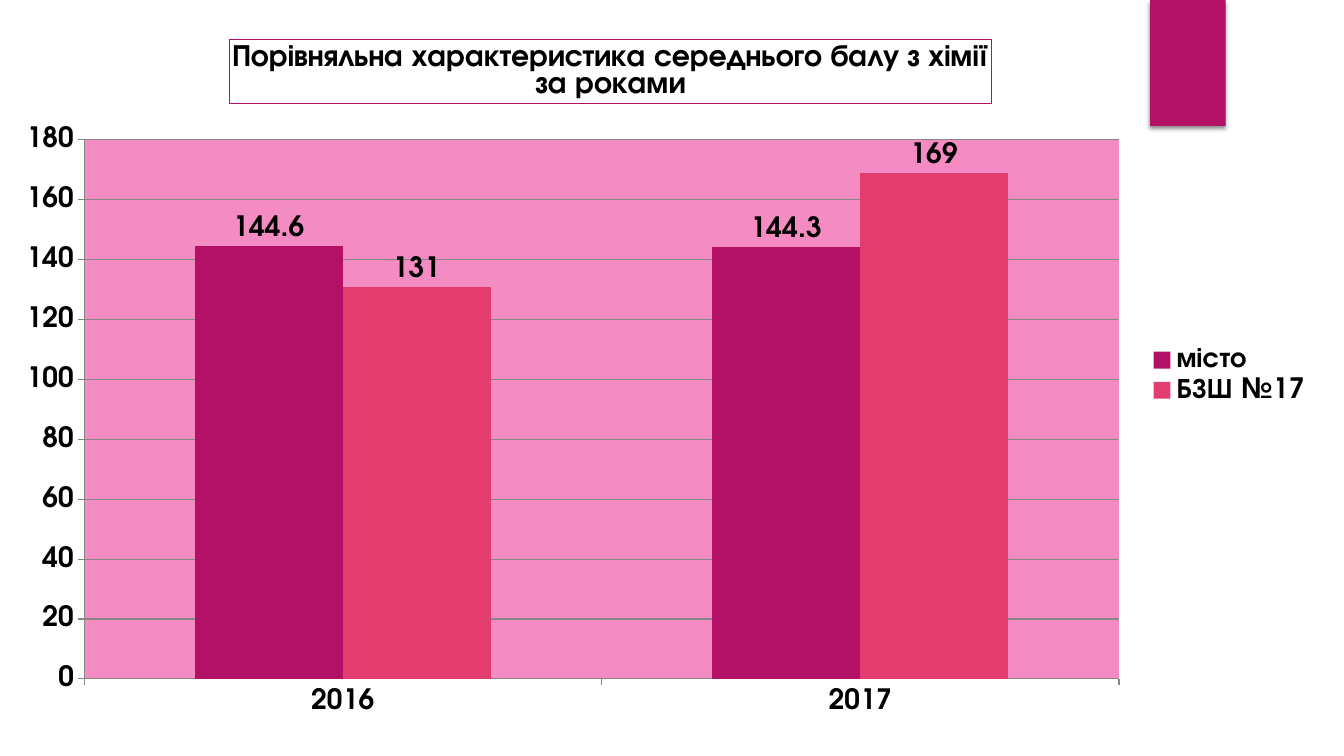
from dataclasses import dataclass

from lxml import etree
from pptx import Presentation
from pptx.chart.chart import Chart
from pptx.chart.data import CategoryChartData
from pptx.dml.color import RGBColor
from pptx.enum.chart import XL_CHART_TYPE, XL_LABEL_POSITION, XL_LEGEND_POSITION, XL_TICK_MARK
from pptx.enum.shapes import MSO_SHAPE
from pptx.oxml import parse_xml
from pptx.oxml.ns import nsdecls, qn
from pptx.slide import Slide
from pptx.util import Pt

COLUMNS = XL_CHART_TYPE.COLUMN_CLUSTERED
OUTSIDE_END = XL_LABEL_POSITION.OUTSIDE_END
LEGEND_RIGHT = XL_LEGEND_POSITION.RIGHT
TICK_OUT = XL_TICK_MARK.OUTSIDE
RECTANGLE = MSO_SHAPE.RECTANGLE


@dataclass(frozen=True)
class Theme:
    font: str = "TeX Gyre Adventor"
    size: float = 20
    title_size: float = 22
    text: RGBColor = RGBColor(0x00, 0x00, 0x00)
    paper: RGBColor = RGBColor(0xFF, 0xFF, 0xFF)
    accent: RGBColor = RGBColor(0xB3, 0x11, 0x66)
    rose: RGBColor = RGBColor(0xE3, 0x3D, 0x6F)
    plot: RGBColor = RGBColor(0xF4, 0x8C, 0xC3)
    grid: RGBColor = RGBColor(0x86, 0x86, 0x86)


@dataclass(frozen=True)
class Box:
    left: float
    top: float
    width: float
    height: float

    def points(self) -> tuple[Pt, Pt, Pt, Pt]:
        return Pt(self.left), Pt(self.top), Pt(self.width), Pt(self.height)


@dataclass(frozen=True)
class ScoreSeries:
    name: str
    scores: tuple[float, ...]
    color: RGBColor


THEME = Theme()
SLIDE = Box(0, 0, 960, 540)
TAB = Box(821.5, 0, 54, 90)
CHART = Box(0, 15.1, 945.4, 506.2)
PLOT = Box(60, 100, 739.3, 385)
TITLE = Box(163.6, 27.9, 613, 52.5)
LEGEND = Box(820, 245, 116, 46)
TITLE_LINES = ("Порівняльна характеристика середнього балу з хімії", "за роками")
YEARS = ("2016", "2017")
SERIES = (
    ScoreSeries("місто", (144.6, 144.3), THEME.accent),
    ScoreSeries("БЗШ №17", (131, 169), THEME.rose),
)


def style_font(font, size: float) -> None:
    font.name = THEME.font
    font.size = Pt(size)
    font.bold = True
    font.color.rgb = THEME.text


def place(part: etree.ElementBase, box: Box, index: int, inner: bool = False, sized: bool = True) -> None:
    old = part.find(qn("c:layout"))
    if old is not None:
        part.remove(old)
    layout = parse_xml(f"<c:layout {nsdecls('c')}><c:manualLayout/></c:layout>")
    settings = {"layoutTarget": "inner"} if inner else {}
    settings |= {
        "xMode": "edge",
        "yMode": "edge",
        "x": f"{(box.left - CHART.left) / CHART.width:.4f}",
        "y": f"{(box.top - CHART.top) / CHART.height:.4f}",
    }
    if sized:
        settings |= {"w": f"{box.width / CHART.width:.4f}", "h": f"{box.height / CHART.height:.4f}"}
    for tag, value in settings.items():
        etree.SubElement(layout[0], qn(f"c:{tag}")).set("val", value)
    part.insert(index, layout)


def add_tab(s: Slide) -> None:
    sp = s.shapes.add_shape(RECTANGLE, *TAB.points())
    sp.fill.solid()
    sp.fill.fore_color.rgb = THEME.accent
    sp.line.fill.background()
    sp.shadow.inherit = False
    effects = sp.element.spPr.find(qn("a:effectLst"))
    effects.append(parse_xml(
        f'<a:outerShdw {nsdecls("a")} blurRad="{Pt(3)}" dist="{Pt(2)}" dir="5400000" rotWithShape="0">'
        '<a:srgbClr val="000000"><a:alpha val="45000"/></a:srgbClr></a:outerShdw>'
    ))


def add_title(chart: Chart) -> None:
    chart.has_title = True
    title = chart.chart_title
    tf = title.text_frame
    for number, line in enumerate(TITLE_LINES):
        p = tf.add_paragraph() if number else tf.paragraphs[0]
        r = p.add_run()
        r.text = line
        style_font(r.font, THEME.title_size)
    title.format.fill.solid()
    title.format.fill.fore_color.rgb = THEME.paper
    title.format.line.color.rgb = THEME.accent
    title.format.line.width = Pt(0.75)
    place(title.element, TITLE, 1, sized=False)
    title.element.find(qn("c:overlay")).set("val", "1")


def style_axes(chart: Chart) -> None:
    for axis in (chart.category_axis, chart.value_axis):
        axis.major_tick_mark = TICK_OUT
        axis.format.line.color.rgb = THEME.grid
        style_font(axis.tick_labels.font, THEME.size)
    axis = chart.value_axis
    axis.minimum_scale, axis.maximum_scale, axis.major_unit = 0, 180, 20
    axis.has_major_gridlines = True
    axis.major_gridlines.format.line.color.rgb = THEME.grid


def add_score_chart(s: Slide) -> None:
    data = CategoryChartData()
    data.categories = YEARS
    for item in SERIES:
        data.add_series(item.name, item.scores)
    chart = s.shapes.add_chart(COLUMNS, *CHART.points(), data).chart
    style_font(chart.font, THEME.size)
    add_title(chart)
    style_axes(chart)
    plot = chart.plots[0]
    plot.gap_width, plot.overlap = 150, 0
    plot.vary_by_categories = False
    for item, series in zip(SERIES, plot.series):
        series.format.fill.solid()
        series.format.fill.fore_color.rgb = item.color
        series.invert_if_negative = False
        labels = series.data_labels
        labels.show_value = True
        labels.position = OUTSIDE_END
        style_font(labels.font, THEME.size)
    chart.has_legend = True
    chart.legend.position = LEGEND_RIGHT
    chart.legend.include_in_layout = False
    style_font(chart.legend.font, THEME.size)
    place(chart.element.find(".//" + qn("c:legend")), LEGEND, 1)
    area = chart.element.find(".//" + qn("c:plotArea"))
    place(area, PLOT, 0, inner=True)
    area.append(parse_xml(
        f'<c:spPr {nsdecls("c", "a")}><a:solidFill><a:srgbClr val="{THEME.plot}"/></a:solidFill></c:spPr>'
    ))


def main() -> None:
    prs = Presentation()
    prs.slide_width, prs.slide_height = Pt(SLIDE.width), Pt(SLIDE.height)
    s = prs.slides.add_slide(prs.slide_layouts[6])
    add_tab(s)
    add_score_chart(s)
    prs.save("out.pptx")


if __name__ == "__main__":
    main()
